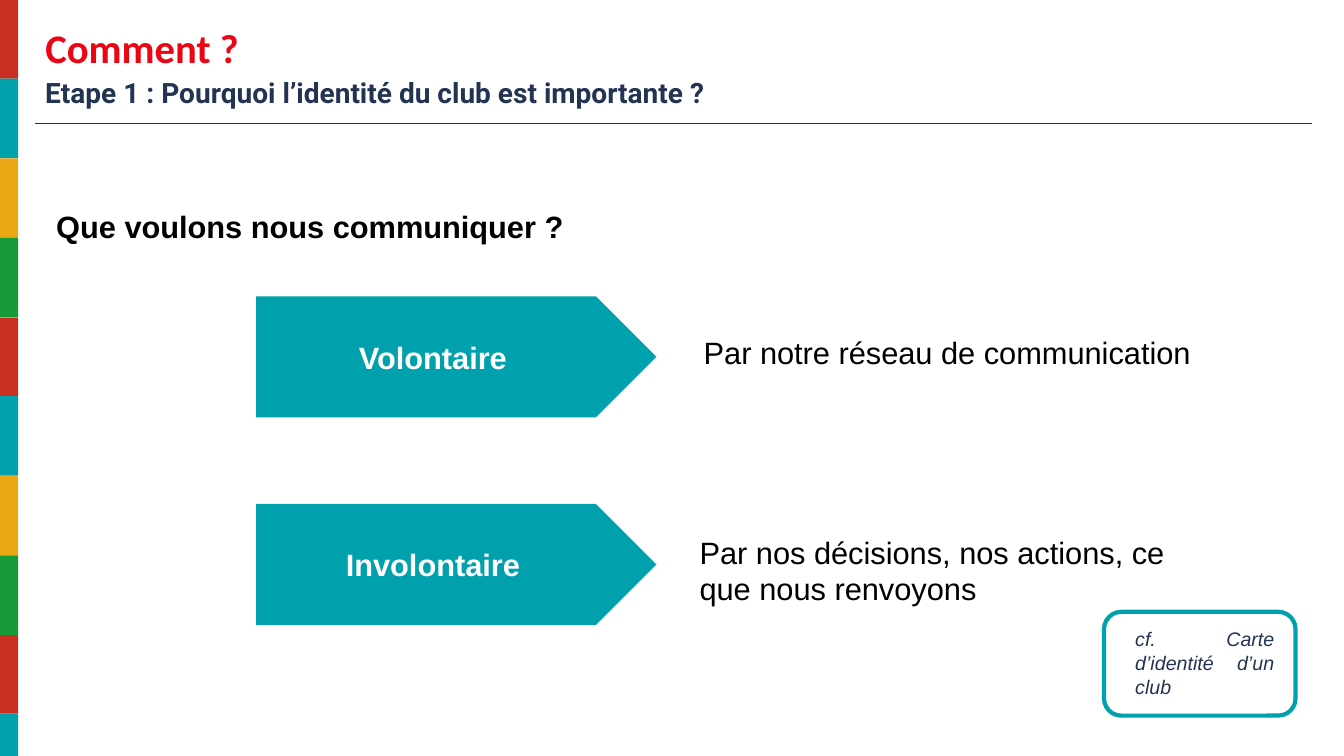
import dataclasses
import typing

import lxml.etree
import pptx
import pptx.dml.color
import pptx.enum.shapes
import pptx.enum.text
import pptx.oxml.ns
import pptx.util

EMU_PER_PX = 9144  # 100 px to the inch
ALIGN = pptx.enum.text.PP_ALIGN
ANCHOR = pptx.enum.text.MSO_ANCHOR
SHAPE = pptx.enum.shapes.MSO_SHAPE

COLOURS = {
    "red": "C92F20",
    "teal": "00A1AC",
    "amber": "EBA613",
    "green": "179A38",
    "title": "EC0614",
    "navy": "233352",
    "rule": "21304E",
    "black": "000000",
    "white": "FFFFFF",
}


@dataclasses.dataclass(frozen=True)
class Box:
    left: int
    top: int
    width: int
    height: int


@dataclasses.dataclass(frozen=True)
class Style:
    size: int
    colour: str
    font: str = "Arial"
    bold: bool = False
    italic: bool = False
    align: typing.Any = ALIGN.LEFT


@dataclasses.dataclass(frozen=True)
class Channel:
    label: str
    top: int
    explanation: str
    explanation_box: Box
    align: typing.Any


CHANNELS = [
    Channel("Volontaire", 294, "Par notre réseau de communication",
            Box(684, 321, 511, 57), ALIGN.CENTER),
    Channel("Involontaire", 500, "Par nos décisions, nos actions, ce que nous renvoyons",
            Box(684, 519, 511, 94), ALIGN.LEFT),
]


def px(length: int) -> pptx.util.Emu:
    return pptx.util.Emu(length * EMU_PER_PX)


def frame(box: Box) -> tuple:
    return px(box.left), px(box.top), px(box.width), px(box.height)


def rgb(name: str) -> pptx.dml.color.RGBColor:
    return pptx.dml.color.RGBColor.from_string(COLOURS[name])


def write(shape, text: str, style: Style, insets: tuple = (10, 10, 10, 10),
          anchor=ANCHOR.TOP) -> None:
    """Insets run left, top, right, bottom."""
    body = shape.text_frame
    body.text = text
    body.word_wrap = True
    body.auto_size = pptx.enum.text.MSO_AUTO_SIZE.NONE
    body.vertical_anchor = anchor
    body.margin_left, body.margin_top, body.margin_right, body.margin_bottom = map(px, insets)
    paragraph = body.paragraphs[0]
    paragraph.alignment = style.align
    font = paragraph.runs[0].font
    font.name = style.font
    font.size = pptx.util.Pt(style.size)
    font.bold = style.bold
    font.italic = style.italic
    font.color.rgb = rgb(style.colour)


def add_text(slide, box: Box, text: str, style: Style, insets: tuple = (10, 10, 10, 10)) -> None:
    write(slide.shapes.add_textbox(*frame(box)), text, style, insets)


def add_filled(slide, kind, box: Box, colour: str):
    shape = slide.shapes.add_shape(kind, *frame(box))
    shape.shadow.inherit = False
    shape.fill.solid()
    shape.fill.fore_color.rgb = rgb(colour)
    shape.line.fill.background()
    return shape


def add_stripes(slide) -> None:
    cycle = ["red", "teal", "amber", "green"]
    tops = [315 * i // 4 for i in range(10)] + [750]
    for i, (top, bottom) in enumerate(zip(tops, tops[1:])):
        add_filled(slide, SHAPE.RECTANGLE, Box(0, top, 18, bottom - top), cycle[i % len(cycle)])


def add_heading(slide) -> None:
    title = slide.shapes.title
    title.left, title.top, title.width, title.height = frame(Box(35, 14, 1266, 65))
    write(title, "Comment ?", Style(29, "title", "Calibri", bold=True),
          (10, 5, 10, 5), ANCHOR.MIDDLE)
    add_text(slide, Box(35, 70, 1182, 44),
             "Etape 1 : Pourquoi l’identité du club est importante ?",
             Style(20, "navy", "Roboto", bold=True), (10, 5, 10, 5))
    rule = slide.shapes.add_connector(pptx.enum.shapes.MSO_CONNECTOR.STRAIGHT,
                                      px(35), px(123), px(1301), px(123))
    rule.line.color.rgb = rgb("rule")
    rule.line.width = pptx.util.Pt(0.75)
    lxml.etree.SubElement(rule._element.spPr, pptx.oxml.ns.qn("a:effectLst"))


def add_channel(slide, channel: Channel) -> None:
    arrow = add_filled(slide, SHAPE.PENTAGON, Box(254, channel.top, 397, 120), "teal")
    arrow.adjustments[0] = 0.5
    write(arrow, channel.label, Style(22, "white", bold=True, align=ALIGN.CENTER),
          (10, 10, 26, 10), ANCHOR.MIDDLE)
    add_text(slide, channel.explanation_box, channel.explanation,
             Style(22, "black", align=channel.align))


def add_reference(slide) -> None:
    card = slide.shapes.add_shape(SHAPE.ROUNDED_RECTANGLE, *frame(Box(1095, 607, 190, 103)))
    card.shadow.inherit = False
    card.fill.background()
    card.line.color.rgb = rgb("teal")
    card.line.width = pptx.util.Pt(3)
    write(card, "cf. Carte d’identité d’un club",
          Style(14, "navy", italic=True, align=ALIGN.JUSTIFY), (26, 5, 16, 7), ANCHOR.MIDDLE)


def main() -> None:
    deck = pptx.Presentation()
    deck.slide_width, deck.slide_height = px(1333), px(750)
    slide = deck.slides.add_slide(deck.slide_layouts.get_by_name("Title Only"))

    # Side band and heading
    add_stripes(slide)
    add_heading(slide)

    # Question and its two answers
    add_text(slide, Box(46, 196, 1243, 57), "Que voulons nous communiquer ?",
             Style(22, "black", bold=True))
    for channel in CHANNELS:
        add_channel(slide, channel)

    # Cross-reference card
    add_reference(slide)
    deck.save("out.pptx")


if __name__ == "__main__":
    main()
